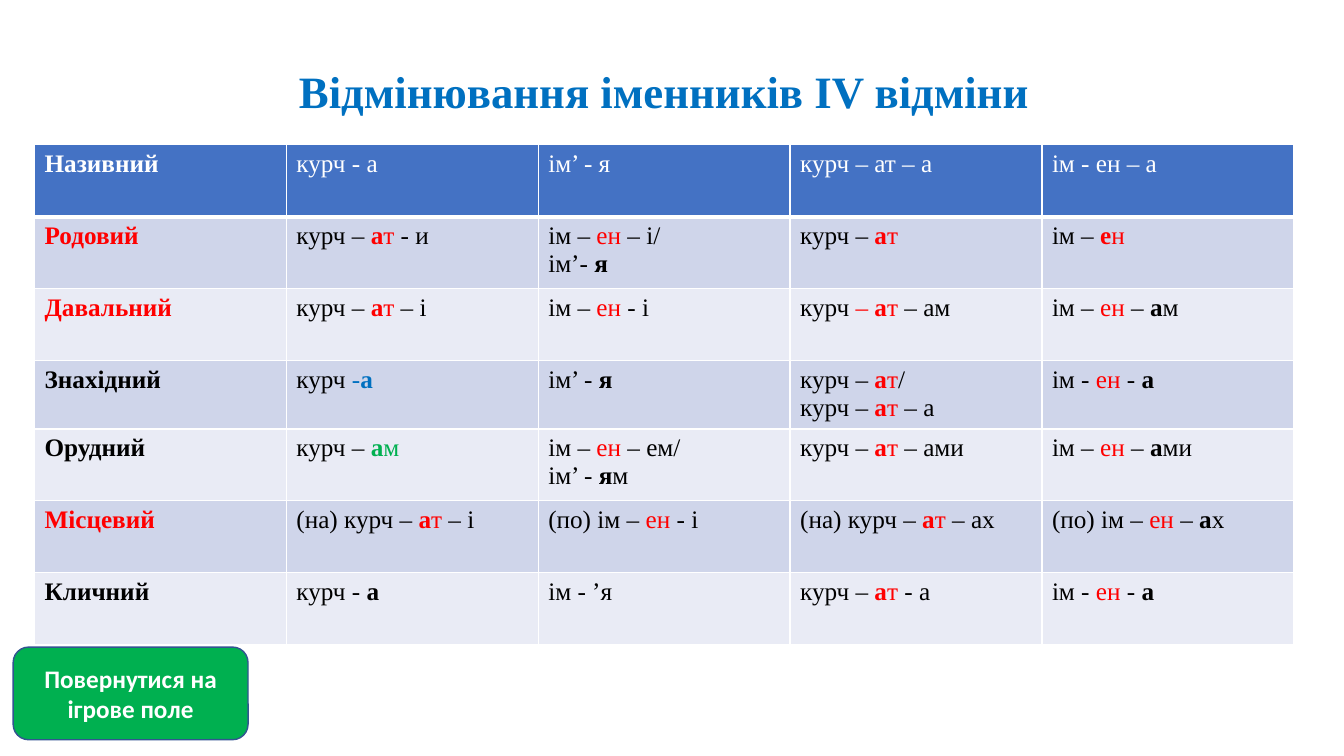
from lxml.etree import SubElement
from pptx import Presentation
from pptx.dml.color import RGBColor
from pptx.enum.shapes import MSO_SHAPE as Shape
from pptx.enum.text import MSO_ANCHOR as Anchor, PP_ALIGN as Align
from pptx.oxml.ns import qn
from pptx.util import Pt

COLORS = {
    "white": "FFFFFF", "black": "000000", "red": "FF0000", "blue": "0070C0",
    "green": "00B050", "header": "4472C4", "dark band": "CFD5EA",
    "light band": "E9EBF5", "outline": "325491",
}
MARKS = {"r": "red", "b": "blue", "g": "green", "k": "black", "w": "white"}
SERIF = "Times New Roman"

# Each span may start with a colour mark; a capital mark means bold.
DECLENSION = [
    ["W:Називний", "w:курч - а", "w:ім’ - я", "w:курч – ат – а", "w:ім - ен – а"],
    ["R:Родовий", "курч – |R:а|r:т |- и", "ім – |r:ен |– і/\nім’- |K:я",
     "курч – |R:а|r:т", "ім – |R:е|r:н"],
    ["R:Давальний", "курч – |R:а|r:т |– і", "ім – |r:ен| - і",
     "курч |r:– |R:а|r:т |– ам", "ім – |r:ен| – |K:а|м"],
    ["K:Знахідний", "курч |b:-|B:а", "ім’ - |K:я",
     "курч – |R:а|r:т|/\nкурч – |R:а|r:т |– а", "ім - |r:ен| - |K:а"],
    ["K:Орудний", "курч – |G:а|g:м", "ім – |r:ен |– ем/\nім’ - |K:я|м",
     "курч – |R:а|r:т| – ами", "ім – |r:ен| – |K:а|ми"],
    ["R:Місцевий", "(на) курч – |R:а|r:т| – і", "(по) ім – |r:ен |- і",
     "(на) курч – |R:а|r:т| – ах", "(по) ім – |r:ен |– |K:а|х"],
    ["K:Кличний", "курч - |K:а", "ім - ’я", "курч – |R:а|r:т| - а",
     "ім - |r:ен| - |K:а"],
]
COLUMN_WIDTH = 179.9
ROW_HEIGHTS = [51.4, 51.4, 51.4, 48.8, 51.4, 51.4, 51.4]


def rgb(name):
    return RGBColor.from_string(COLORS[name])


def place(box, left, top, width, height):
    for name, value in dict(left=left, top=top, width=width, height=height).items():
        setattr(box, name, Pt(value))


def add_span(para, words, color, size, face, bold):
    span = para.add_run()
    span.text = words
    for name, value in dict(size=Pt(size), name=face, bold=bold).items():
        setattr(span.font, name, value)
    span.font.color.rgb = rgb(color)


def fill_marked_text(frame, text):
    for index, line in enumerate(text.split("\n")):
        para = frame.add_paragraph() if index else frame.paragraphs[0]
        for part in line.split("|"):
            mark, _, words = part.rpartition(":")
            color = MARKS[mark.lower() or "k"]
            add_span(para, words, color, 18, SERIF, mark.isupper())


def add_borders(cell, widths):
    properties = cell._tc.get_or_add_tcPr()
    for side, width in widths.items():
        line = SubElement(properties, qn(f"a:ln{side}"), w=str(Pt(width)))
        fill = SubElement(line, qn("a:solidFill"))
        SubElement(fill, qn("a:srgbClr"), val=COLORS["white"])


def add_title(page, text):
    box = page.shapes.title
    place(box, 51.1, 12.2, 846.7, 110.2)
    box.text_frame.vertical_anchor = Anchor.MIDDLE
    para = box.text_frame.paragraphs[0]
    for name, value in dict(alignment=Align.CENTER, line_spacing=0.9).items():
        setattr(para, name, value)
    add_span(para, text, "blue", 32, SERIF, True)


def add_declension_table(page):
    columns = len(DECLENSION[0])
    table = page.shapes.add_table(
        len(DECLENSION), columns, Pt(24.7), Pt(103.4),
        Pt(COLUMN_WIDTH * columns), Pt(sum(ROW_HEIGHTS))).table
    for column in table.columns:
        column.width = Pt(COLUMN_WIDTH)
    for index, texts in enumerate(DECLENSION):
        table.rows[index].height = Pt(ROW_HEIGHTS[index])
        band = "dark band" if index % 2 else "light band"
        widths = {"L": 1, "R": 1, "T": 3 if index == 1 else 1,
                  "B": 1 if index else 3}
        for cell, text in zip(table.rows[index].cells, texts):
            add_borders(cell, widths)
            cell.fill.solid()
            cell.fill.fore_color.rgb = rgb(band if index else "header")
            fill_marked_text(cell.text_frame, text)


def add_button(page, text):
    box = page.shapes.add_shape(
        Shape.ROUNDED_RECTANGLE, Pt(9.4), Pt(462.2), Pt(167.8), Pt(66.2))
    box.shadow.inherit = False
    box.fill.solid()
    box.fill.fore_color.rgb = rgb("green")
    box.line.color.rgb = rgb("outline")
    box.line.width = Pt(1)
    for name, value in dict(word_wrap=True, vertical_anchor=Anchor.MIDDLE).items():
        setattr(box.text_frame, name, value)
    para = box.text_frame.paragraphs[0]
    para.alignment = Align.CENTER
    add_span(para, text, "white", 18, "Calibri", True)


def main():
    deck = Presentation()
    deck.slide_width, deck.slide_height = Pt(960), Pt(540)
    page = deck.slides.add_slide(deck.slide_layouts[5])
    add_title(page, "Відмінювання іменників ІV відміни")
    add_declension_table(page)
    add_button(page, "Повернутися на ігрове поле")
    deck.save("out.pptx")


if __name__ == "__main__":
    main()
